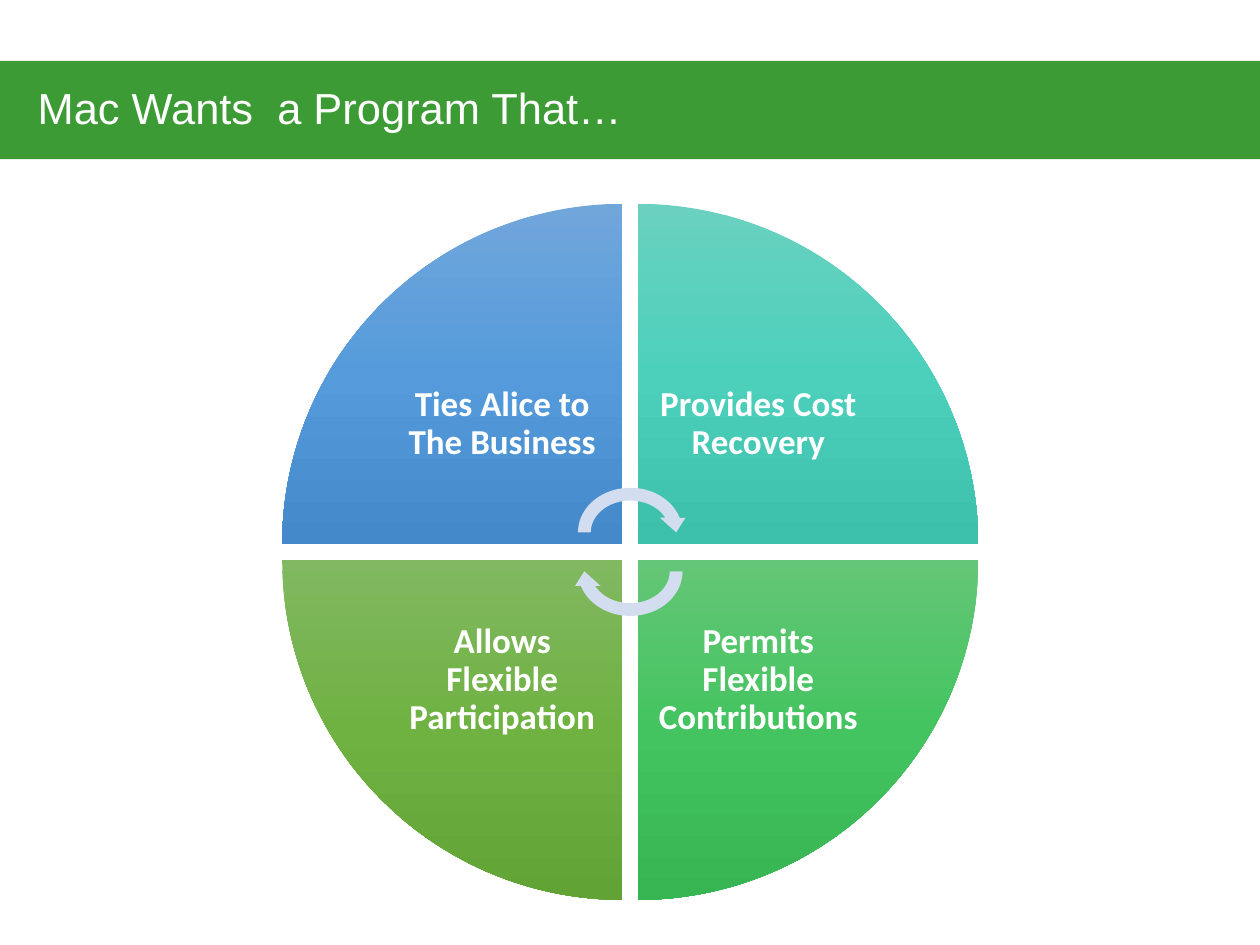
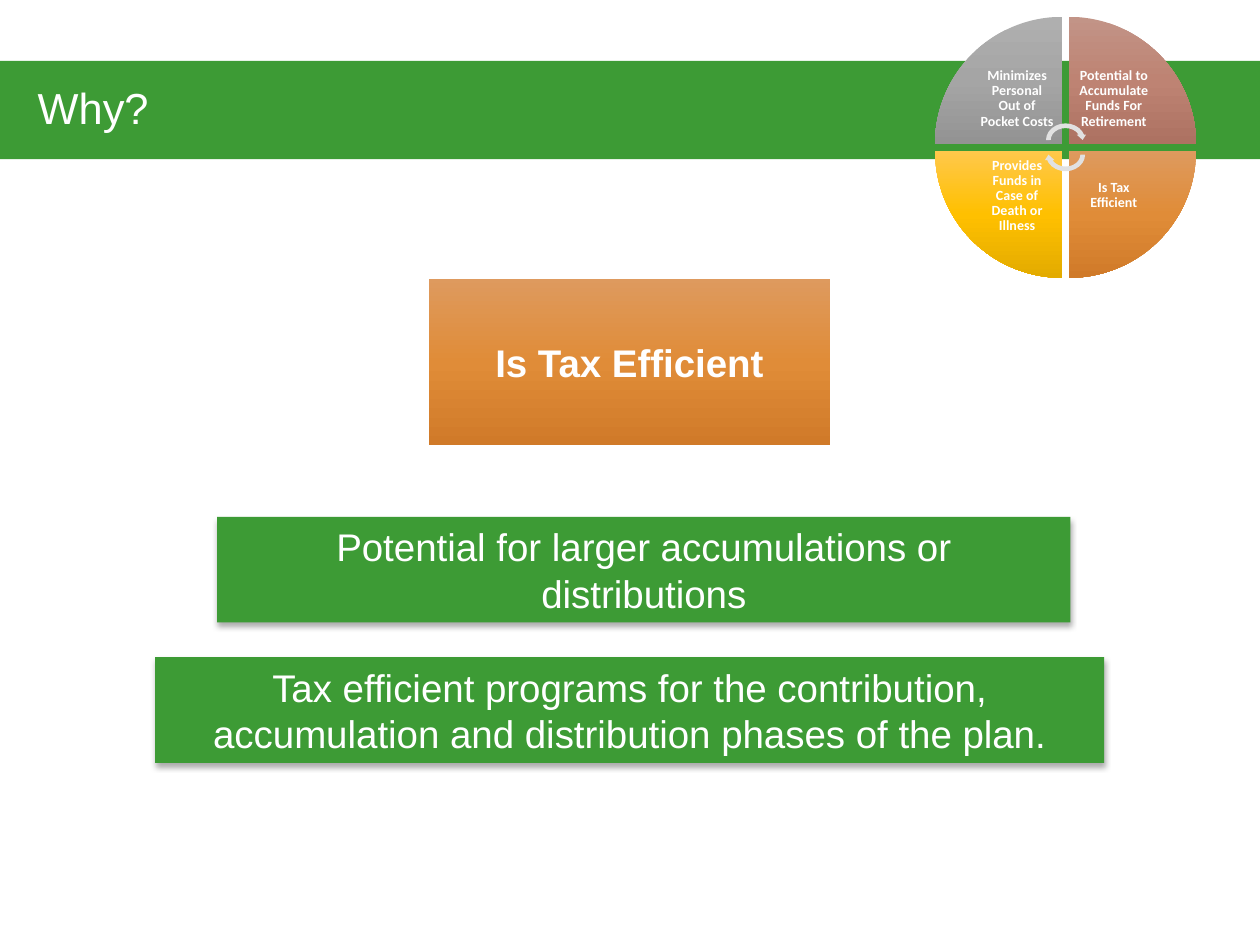
"""Build two slides about what a business owner wants from a benefit program."""
import copy
import math
from dataclasses import dataclass

import lxml.etree
import pptx
import pptx.dml.color
import pptx.enum.shapes
import pptx.enum.text
import pptx.oxml.ns
import pptx.util
from pptx.util import Cm

SHAPE = pptx.enum.shapes.MSO_SHAPE
ALIGN = pptx.enum.text.PP_ALIGN
ANCHOR = pptx.enum.text.MSO_ANCHOR
qn = pptx.oxml.ns.qn


@dataclass(frozen=True)
class Theme:
    """Colours, fonts and type sizes shared by the slides."""
    green: str = "3D9B35"
    white: str = "FFFFFF"
    black: str = "000000"
    pale_blue: str = "D2DEEF"
    pale_grey: str = "E1E1E1"
    blue_fade: tuple = ("71A6DB", "559BDB", "448ACA")
    teal_fade: tuple = ("6AD1C0", "4CD0BC", "3CC0AC")
    emerald_fade: tuple = ("64C677", "44C460", "36B552")
    lime_fade: tuple = ("81B861", "6FB242", "62A336")
    grey_fade: tuple = ("AFAFAF", "A5A5A5", "939393")
    brown_fade: tuple = ("C29487", "BE8373", "AD7262")
    orange_fade: tuple = ("DE9A5E", "E08C38", "D07A29")
    yellow_fade: tuple = ("FFC84B", "FFC000", "E3AB00")
    heading_font: str = "Arial"
    wheel_font: str = "Calibri"
    title_size: float = 24.8
    body_size: float = 22
    wheel_size: float = 20
    small_wheel_size: float = 8


THEME = Theme()


def rgb(code):
    """Turn a hex code into a colour."""
    return pptx.dml.color.RGBColor.from_string(code)


def write_text(holder, text, size, font=THEME.heading_font, bold=False, align=ALIGN.CENTER,
               anchor=ANCHOR.MIDDLE, spacing=1.0, insets=(0.25, 0.13)):
    """Put formatted white text into a shape or text box."""
    frame = holder.text_frame
    frame.word_wrap = True
    frame.vertical_anchor = anchor
    frame.margin_left = frame.margin_right = Cm(insets[0])
    frame.margin_top = frame.margin_bottom = Cm(insets[1])
    paragraph = frame.paragraphs[0]
    paragraph.alignment = align
    paragraph.line_spacing = spacing
    run = paragraph.add_run()
    run.text = text
    run.font.name = font
    run.font.size = pptx.util.Pt(size)
    run.font.bold = bold
    run.font.color.rgb = rgb(THEME.white)


def apply_fade(shape, colours):
    """Fill a shape with a top-to-bottom gradient that ignores its rotation."""
    shape.fill.gradient()
    shape.fill.gradient_angle = 270
    gradient = shape.element.spPr.find(qn("a:gradFill"))
    gradient.set("rotWithShape", "0")
    stops = gradient.find(qn("a:gsLst"))
    stops.insert(1, copy.deepcopy(stops[0]))
    for index, (stop, colour) in enumerate(zip(shape.fill.gradient_stops, colours)):
        stop.color.rgb = rgb(colour)
        stop.position = index / 2


def add_filled(shapes, kind, left, top, width, height, fill, rotation=0):
    """Add a borderless shape with a plain colour or a gradient."""
    shape = shapes.add_shape(kind, Cm(left), Cm(top), Cm(width), Cm(height))
    shape.shadow.inherit = False
    shape.line.fill.background()
    shape.rotation = rotation
    if isinstance(fill, tuple):
        apply_fade(shape, fill)
    else:
        shape.fill.solid()
        shape.fill.fore_color.rgb = rgb(fill)
    return shape


def add_title(slide, text):
    """Add the green title band."""
    band = add_filled(slide.shapes, SHAPE.RECTANGLE, 0, 1.23, 25.4, 1.98, THEME.green)
    write_text(band, text, THEME.title_size, align=ALIGN.LEFT, anchor=ANCHOR.BOTTOM,
               spacing=0.9, insets=(0.76, 0.51))


def add_wheel(slide, left, top, wedge, gap, quadrants, arrow_colour, size, inset):
    """Add four quarter wedges, clockwise from top left, round two turning arrows."""
    shapes = slide.shapes.add_group_shape().shapes
    label_side = wedge / math.sqrt(2)
    outer = wedge - label_side
    pitch = wedge + gap
    for index, (text, fade) in enumerate(quadrants):
        column, row = index in (1, 2), index > 1
        x, y = left + column * pitch, top + row * pitch
        add_filled(shapes, SHAPE.PIE_WEDGE, x, y, wedge, wedge, fade, 90 * index)
        label = shapes.add_textbox(Cm(x if column else x + outer), Cm(y if row else y + outer),
                                   Cm(label_side), Cm(label_side))
        write_text(label, text, size, font=THEME.wheel_font, bold=True,
                   spacing=0.9, insets=(inset, inset))
    width, height, offset = 0.345 * wedge, 0.3 * wedge, 0.057 * wedge
    middle = wedge + gap / 2
    for direction, rotation in ((-1, 0), (1, 180)):
        add_filled(shapes, SHAPE.CIRCULAR_ARROW, left + middle - width / 2,
                   top + middle + direction * offset - height / 2,
                   width, height, arrow_colour, rotation)


def add_shadow(shape):
    """Drop a soft shadow below a shape."""
    effects = shape.element.spPr.find(qn("a:effectLst"))
    shadow = lxml.etree.SubElement(effects, qn("a:outerShdw"), blurRad="44450", dist="27940",
                                   dir="5400000", algn="ctr", rotWithShape="0")
    colour = lxml.etree.SubElement(shadow, qn("a:srgbClr"), val=THEME.black)
    lxml.etree.SubElement(colour, qn("a:alpha"), val="32000")


def add_reason(slide, text, left, top, width):
    """Add a green statement bar with a shadow."""
    bar = add_filled(slide.shapes, SHAPE.RECTANGLE, left, top, width, 2.13, THEME.green)
    add_shadow(bar)
    write_text(bar, text, THEME.body_size)


def build_program_slide(slide):
    """Show the four things wanted from the program."""
    add_title(slide, "Mac Wants  a Program That…")
    wishes = [
        ("Ties Alice to The Business", THEME.blue_fade),
        ("Provides Cost Recovery", THEME.teal_fade),
        ("Permits Flexible Contributions", THEME.emerald_fade),
        ("Allows Flexible Participation", THEME.lime_fade),
    ]
    add_wheel(slide, 5.69, 4.11, 6.86, 0.31, wishes, THEME.pale_blue, THEME.wheel_size, 0.4)


def build_why_slide(slide):
    """Explain the tax efficiency of the program."""
    add_title(slide, "Why?")
    benefit = add_filled(slide.shapes, SHAPE.RECTANGLE, 8.65, 5.62, 8.08, 3.36,
                         THEME.orange_fade)
    write_text(benefit, "Is Tax Efficient", THEME.body_size, bold=True, insets=(0.15, 0.15))
    benefits = [
        ("Minimizes Personal Out of Pocket Costs", THEME.grey_fade),
        ("Potential to Accumulate Funds For Retirement", THEME.brown_fade),
        ("Is Tax Efficient", THEME.orange_fade),
        ("Provides Funds in Case of Death or Illness", THEME.yellow_fade),
    ]
    add_wheel(slide, 18.85, 0.34, 2.56, 0.14, benefits, THEME.pale_grey,
              THEME.small_wheel_size, 0.15)
    add_reason(slide, "Potential for larger accumulations or distributions", 4.38, 10.42, 17.2)
    add_reason(slide, "Tax efficient programs for the contribution, accumulation and "
               "distribution phases of the plan.", 3.13, 13.25, 19.13)


def main():
    """Create the presentation and save it."""
    deck = pptx.Presentation()
    deck.slide_width, deck.slide_height = Cm(25.4), Cm(19.05)
    for build in (build_program_slide, build_why_slide):
        build(deck.slides.add_slide(deck.slide_layouts[6]))
    deck.save("out.pptx")


if __name__ == "__main__":
    main()
